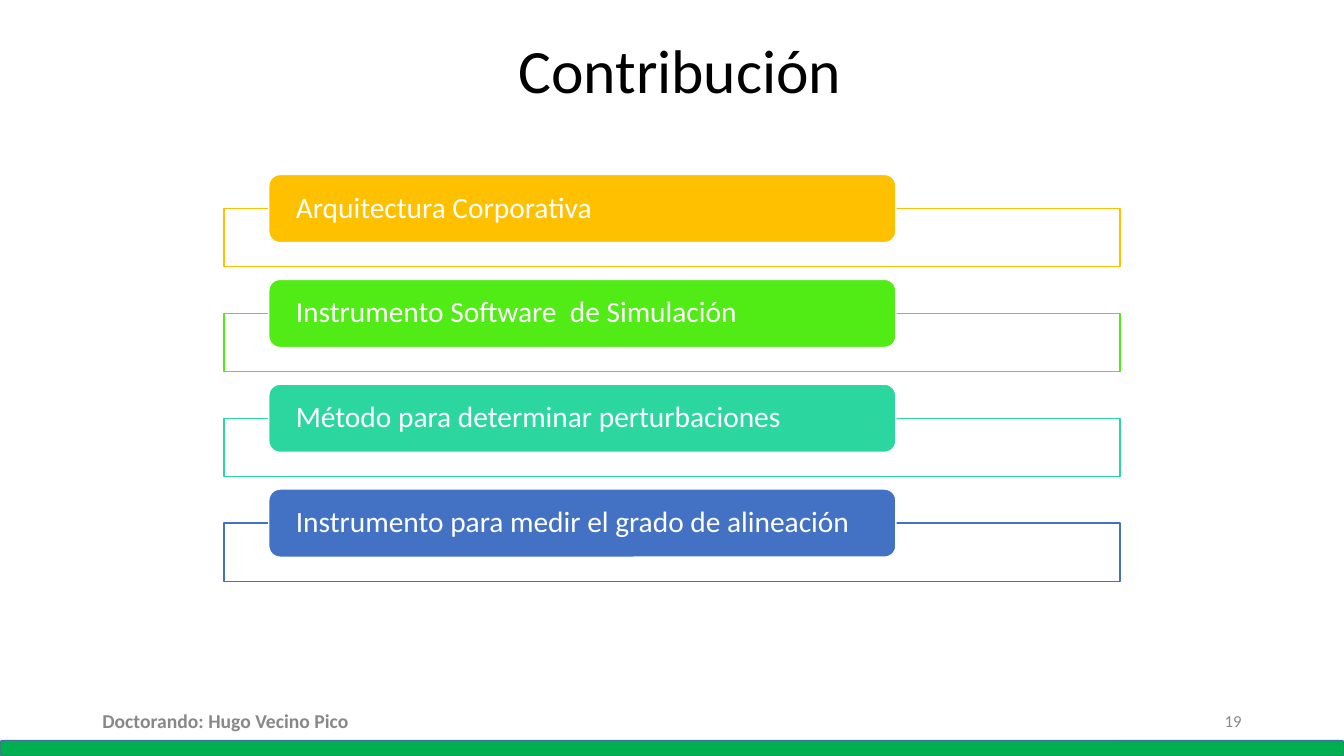
from dataclasses import dataclass

import pptx
import pptx.dml.color
import pptx.enum.shapes
import pptx.enum.text
import pptx.oxml.ns
import pptx.util
from lxml import etree

Pt = pptx.util.Pt
RGB = pptx.dml.color.RGBColor
KIND = pptx.enum.shapes.MSO_SHAPE
ALIGN = pptx.enum.text.PP_ALIGN
MIDDLE = pptx.enum.text.MSO_ANCHOR.MIDDLE

WHITE = RGB(0xFF, 0xFF, 0xFF)
BLACK = RGB(0x00, 0x00, 0x00)
GRAY = RGB(0x88, 0x88, 0x88)
GREEN = RGB(0x00, 0xB0, 0x50)
NAVY = RGB(0x42, 0x71, 0x9B)
AMBER = RGB(0xFF, 0xC0, 0x00)
LIME = RGB(0x51, 0xEB, 0x15)
TEAL = RGB(0x2C, 0xD7, 0x9F)
BLUE = RGB(0x43, 0x71, 0xC3)

WIDE, HIGH = 960, 540
TOP, PITCH = 149, 74.9  # top of the first frame, step between rows
PILL = 48.7


@dataclass
class Box:
    left: float
    top: float
    width: float
    height: float

    def place(self) -> list:
        return [Pt(n) for n in (self.left, self.top, self.width, self.height)]


@dataclass
class Label:
    text: str
    size: float
    color: RGB
    align: ALIGN = ALIGN.LEFT
    bold: bool = False
    space: float = 1.0
    side: float = 7.2
    edge: float = 3.6


@dataclass
class Item:
    text: str
    color: RGB


def write(shape, label: Label) -> None:
    frame = shape.text_frame
    form = {
        "word_wrap": True, "vertical_anchor": MIDDLE,
        "margin_left": Pt(label.side), "margin_right": Pt(label.side),
        "margin_top": Pt(label.edge), "margin_bottom": Pt(label.edge),
    }
    for name, value in form.items():
        setattr(frame, name, value)
    para = frame.paragraphs[0]
    para.alignment = label.align
    para.line_spacing = label.space
    run = para.add_run()
    run.text = label.text
    font = {"name": "Calibri", "size": Pt(label.size), "bold": label.bold}
    for name, value in font.items():
        setattr(run.font, name, value)
    run.font.color.rgb = label.color


def draw(slide, kind: KIND, box: Box, fill: RGB, line: RGB):
    shape = slide.shapes.add_shape(kind, *box.place())
    shape.shadow.inherit = False
    shape.fill.solid()
    shape.fill.fore_color.rgb = fill
    shape.line.color.rgb = line
    shape.line.width = Pt(1)
    return shape


def fade(shape, share: int) -> None:
    """Set the opacity of a solid fill, in percent."""
    tag = pptx.oxml.ns.qn
    color = shape.fill._xPr.find(tag("a:solidFill")).find(tag("a:srgbClr"))
    etree.SubElement(color, tag("a:alpha")).set("val", str(share * 1000))


def row(slide, item: Item, top: float) -> None:
    frame = draw(slide, KIND.RECTANGLE, Box(160, top, 640, 41.6), WHITE, item.color)
    fade(frame, 90)
    box = Box(192, top - PILL / 2, 448, PILL)
    pill = draw(slide, KIND.ROUNDED_RECTANGLE, box, item.color, WHITE)
    write(pill, Label(item.text, 21, WHITE, space=0.9, side=17, edge=0))


def main() -> None:
    deck = pptx.Presentation()
    deck.slide_width, deck.slide_height = Pt(WIDE), Pt(HIGH)
    slide = deck.slides.add_slide(deck.slide_layouts[6])

    # Band along the bottom
    draw(slide, KIND.ROUNDED_RECTANGLE, Box(0, 529, WIDE, 11), GREEN, NAVY)

    # Title, footer and page number
    texts = [
        (Box(90.5, 0, 790.5, 104.4),
         Label("Contribución", 44, BLACK, ALIGN.CENTER, space=0.9)),
        (Box(66, 500.5, 324, 28.8),
         Label("Doctorando: Hugo Vecino Pico", 14, GRAY, bold=True)),
        (Box(678, 500.5, 216, 28.8), Label("19", 12, GRAY, ALIGN.RIGHT)),
    ]
    for box, label in texts:
        write(slide.shapes.add_textbox(*box.place()), label)

    # List of contributions
    items = [
        Item("Arquitectura Corporativa", AMBER),
        Item("Instrumento Software  de Simulación", LIME),
        Item("Método para determinar perturbaciones", TEAL),
        Item("Instrumento para medir el grado de alineación", BLUE),
    ]
    for index, item in enumerate(items):
        row(slide, item, TOP + index * PITCH)

    deck.save("out.pptx")


if __name__ == "__main__":
    main()
